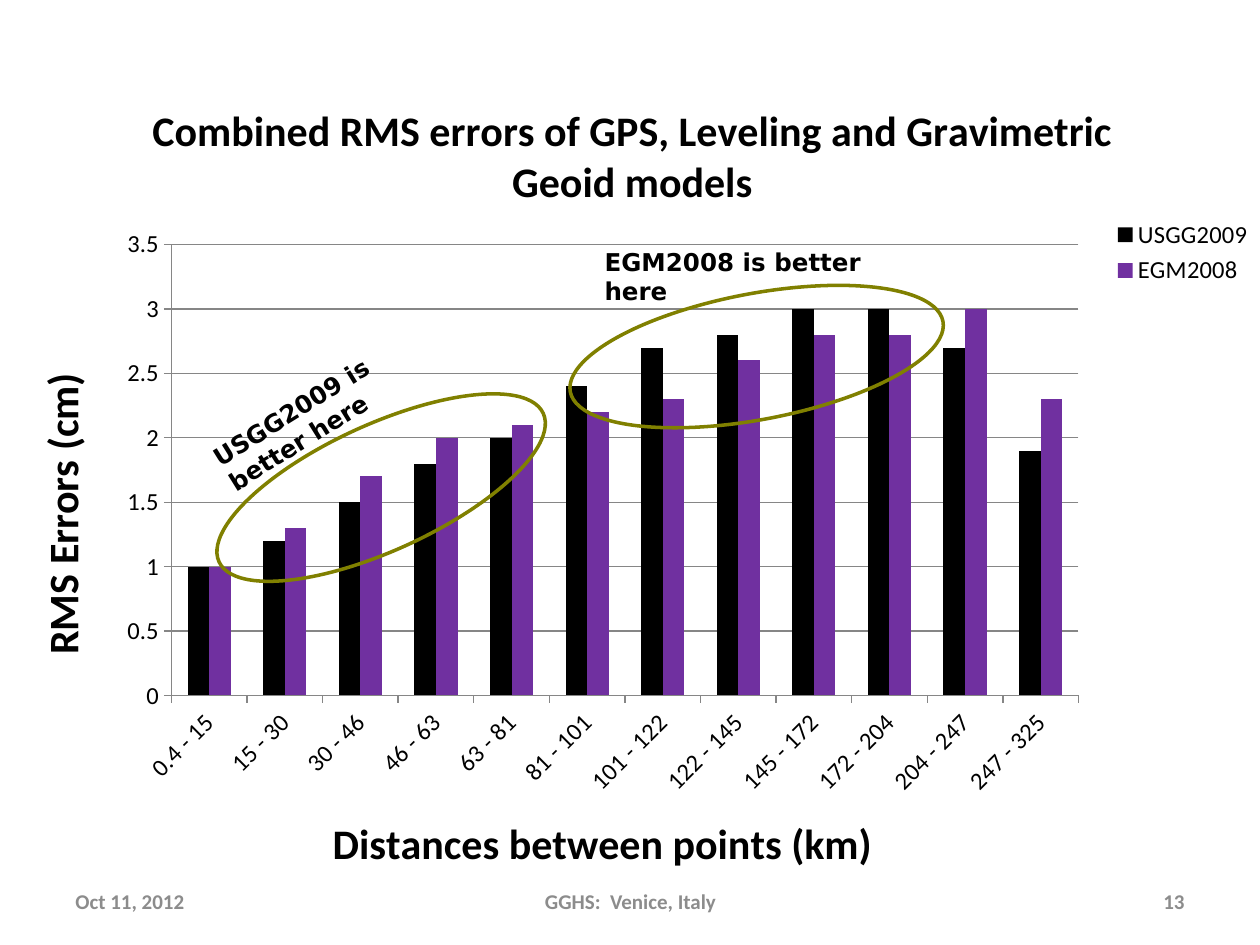
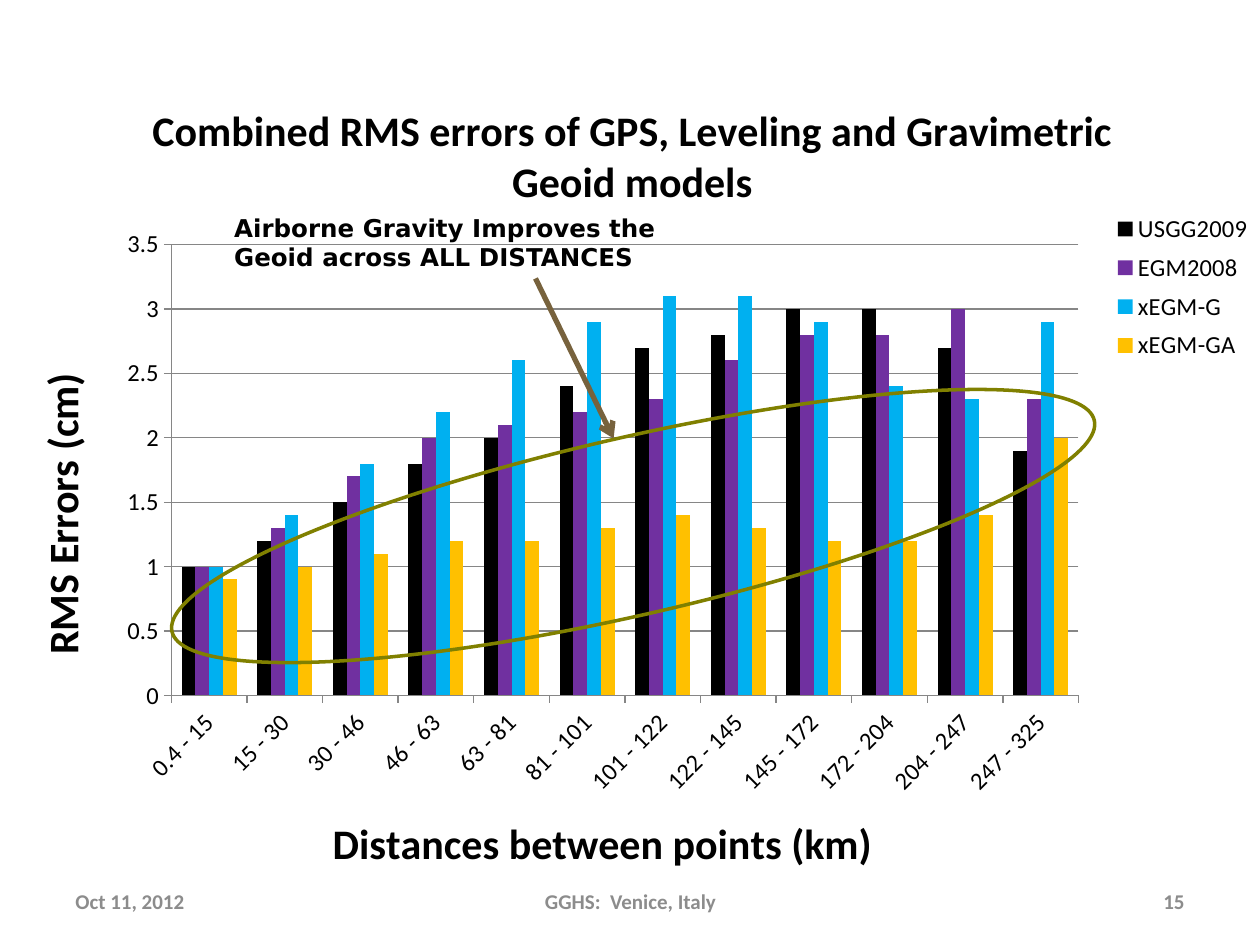
from lxml import etree
from pptx import Presentation
from pptx import util as u
from pptx.chart.data import CategoryChartData
from pptx.dml.color import RGBColor
from pptx.enum import chart as ch, shapes, text
from pptx.oxml import parse_xml
from pptx.oxml.ns import nsdecls, qn

BLACK, GREY, GRID, OLIVE, BROWN = "000000", "8C8C8C", "868686", "808000", "77623D"
FONT, NOTE_FONT = "Calibri", "DejaVu Sans"
CHART_BOX = (0.03, 0.59, 9.97, 6.52)
DISTANCES = ["0.4 - 15", "15 - 30", "30 - 46", "46 - 63", "63 - 81", "81 - 101",
             "101 - 122", "122 - 145", "145 - 172", "172 - 204", "204 - 247", "247 - 325"]
MODELS = [
    ("USGG2009", BLACK, [1, 1.2, 1.5, 1.8, 2, 2.4, 2.7, 2.8, 3, 3, 2.7, 1.9]),
    ("EGM2008", "7030A0", [1, 1.3, 1.7, 2, 2.1, 2.2, 2.3, 2.6, 2.8, 2.8, 3, 2.3]),
    ("xEGM-G", "00B0F0", [1, 1.4, 1.8, 2.2, 2.6, 2.9, 3.1, 3.1, 2.9, 2.4, 2.3, 2.9]),
    ("xEGM-GA", "FFC000", [0.9, 1, 1.1, 1.2, 1.2, 1.3, 1.4, 1.3, 1.2, 1.2, 1.4, 2]),
]


def rgb(value):
    return RGBColor.from_string(value)


def inches(box):
    return [u.Inches(v) for v in box]


def set_font(font, size, color=BLACK, bold=False, name=FONT):
    font.name, font.size, font.bold = name, u.Pt(size), bold
    font.color.rgb = rgb(color)


def set_line(line, color, width):
    line.color.rgb = rgb(color)
    line.width = u.Pt(width)


def add_text(slide, box, lines, size, color, name=FONT, align=None, anchor=None, rotation=0):
    sp = slide.shapes.add_textbox(*inches(box))
    sp.rotation = rotation
    tf = sp.text_frame
    tf.word_wrap = True
    tf.vertical_anchor = anchor
    tf.text = "\n".join(lines)
    for p in tf.paragraphs:
        p.alignment = align
        set_font(p.font, size, color, True, name)


def add_note(slide, box, lines, rotation=0):
    add_text(slide, box, lines, 14, BLACK, NOTE_FONT, rotation=rotation)


def add_ring(slide, box, rotation):
    sp = slide.shapes.add_shape(shapes.MSO_SHAPE.OVAL, *inches(box))
    sp.shadow.inherit = False
    sp.rotation = rotation
    sp.fill.background()
    set_line(sp.line, OLIVE, 2)


def add_arrow(slide, start, end):
    line = slide.shapes.add_connector(shapes.MSO_CONNECTOR.STRAIGHT, *inches(start + end))
    set_line(line.line, BROWN, 3)
    ln = line.line._get_or_add_ln()
    etree.SubElement(ln, qn("a:tailEnd"), type="arrow")
    etree.SubElement(line._element.spPr, qn("a:effectLst"))


def place(element, index, chart_box, part_box, target=None):
    """Fix a chart part at a left, top, width, height in inches within the chart."""
    for old in element.findall(qn("c:layout")):
        element.remove(old)
    parts = f'<c:layoutTarget val="{target}"/>' if target else ""
    parts += "".join(f'<c:{k}Mode val="edge"/>' for k in "xy")
    parts += "".join(f'<c:{k} val="{length / full:.4f}"/>'
                     for k, length, full in zip("xywh", part_box, chart_box[2:] * 2))
    element.insert(index, parse_xml(
        f'<c:layout {nsdecls("c")}><c:manualLayout>{parts}</c:manualLayout></c:layout>'))


def set_title(title, words):
    title.text_frame.text = words
    set_font(title.text_frame.paragraphs[0].font, 24, bold=True)


def add_error_chart(slide, box, models, legend_box):
    data = CategoryChartData()
    data.categories = DISTANCES
    for name, _, values in models:
        data.add_series(name, values)
    chart = slide.shapes.add_chart(ch.XL_CHART_TYPE.COLUMN_CLUSTERED, *inches(box), data).chart
    set_font(chart.font, 14)
    set_title(chart.chart_title, "Combined RMS errors of GPS, Leveling and Gravimetric Geoid models")

    # Columns
    plot = chart.plots[0]
    plot.gap_width, plot.overlap, plot.vary_by_categories = 150, 0, False
    for series, (_, color, _) in zip(plot.series, models):
        series.format.fill.solid()
        series.format.fill.fore_color.rgb = rgb(color)
        series.invert_if_negative = False

    # Axes
    x_axis, y_axis = chart.category_axis, chart.value_axis
    for axis, words in ((x_axis, "Distances between points (km)"), (y_axis, "RMS Errors (cm)")):
        axis.major_tick_mark = ch.XL_TICK_MARK.OUTSIDE
        axis.minor_tick_mark = ch.XL_TICK_MARK.NONE
        set_line(axis.format.line, GRID, 0.75)
        set_font(axis.tick_labels.font, 14)
        set_title(axis.axis_title, words)
    x_axis._element.find(qn("c:txPr")).find(qn("a:bodyPr")).set("rot", "-2700000")
    y_axis.axis_title.text_frame._txBody.bodyPr.set("rot", "-5400000")
    y_axis.minimum_scale, y_axis.maximum_scale, y_axis.major_unit = 0, 3.5, 0.5
    set_line(y_axis.major_gridlines.format.line, GRID, 0.75)

    # Legend
    chart.has_legend = True
    legend = chart.legend
    legend.position = ch.XL_LEGEND_POSITION.RIGHT
    legend.include_in_layout = False
    set_font(legend.font, 14)

    # Places of the parts
    place(y_axis._element.getparent(), 0, box, (1.33, 1.35, 7.2, 3.58), "inner")
    for part, part_box in ((chart.chart_title, (1.12, 0.16)),
                           (x_axis.axis_title, (2.55, 5.82)),
                           (y_axis.axis_title, (0.18, 2.31)),
                           (legend, legend_box)):
        place(part._element, 1, box, part_box)


def add_footer(slide, number):
    top, height = 6.95, 0.4
    align = text.PP_ALIGN
    for left, width, words, side in ((0.5, 2.33, "Oct 11, 2012", align.LEFT),
                                     (3.42, 3.17, "GGHS:  Venice, Italy", align.CENTER),
                                     (7.17, 2.33, str(number), align.RIGHT)):
        add_text(slide, (left, top, width, height), [words], 12, GREY,
                 align=side, anchor=text.MSO_ANCHOR.MIDDLE)


def add_chart_slide(prs, models, legend_box, number):
    slide = prs.slides.add_slide(prs.slide_layouts[6])
    add_error_chart(slide, CHART_BOX, models, legend_box)
    add_footer(slide, number)
    return slide


def main():
    prs = Presentation()
    prs.slide_width, prs.slide_height = inches((10, 7.5))

    # Two models: each is better over its own range
    s = add_chart_slide(prs, MODELS[:2], (8.86, 1.11, 1.11, 0.61), 13)
    add_ring(s, (1.61, 3.37, 2.83, 1), 335.4)
    add_ring(s, (4.5, 2.33, 3.01, 1), 349.3)
    add_note(s, (4.7, 1.91, 2.7, 0.57), ["EGM2008 is better here"])
    add_note(s, (1.56, 3.06, 1.7, 0.57), ["USGG2009 is", "better here"], 328.1)

    # Four models: airborne gravity is best throughout
    s = add_chart_slide(prs, MODELS, (8.86, 1.04, 1.11, 1.3), 15)
    add_ring(s, (1.27, 3.47, 7.51, 1.41), 347.1)
    add_note(s, (1.76, 1.64, 4.99, 0.57),
             ["Airborne Gravity Improves the", "Geoid across ALL DISTANCES"])
    add_arrow(s, (4.25, 2.21), (4.87, 3.48))

    prs.save("out.pptx")


if __name__ == "__main__":
    main()
